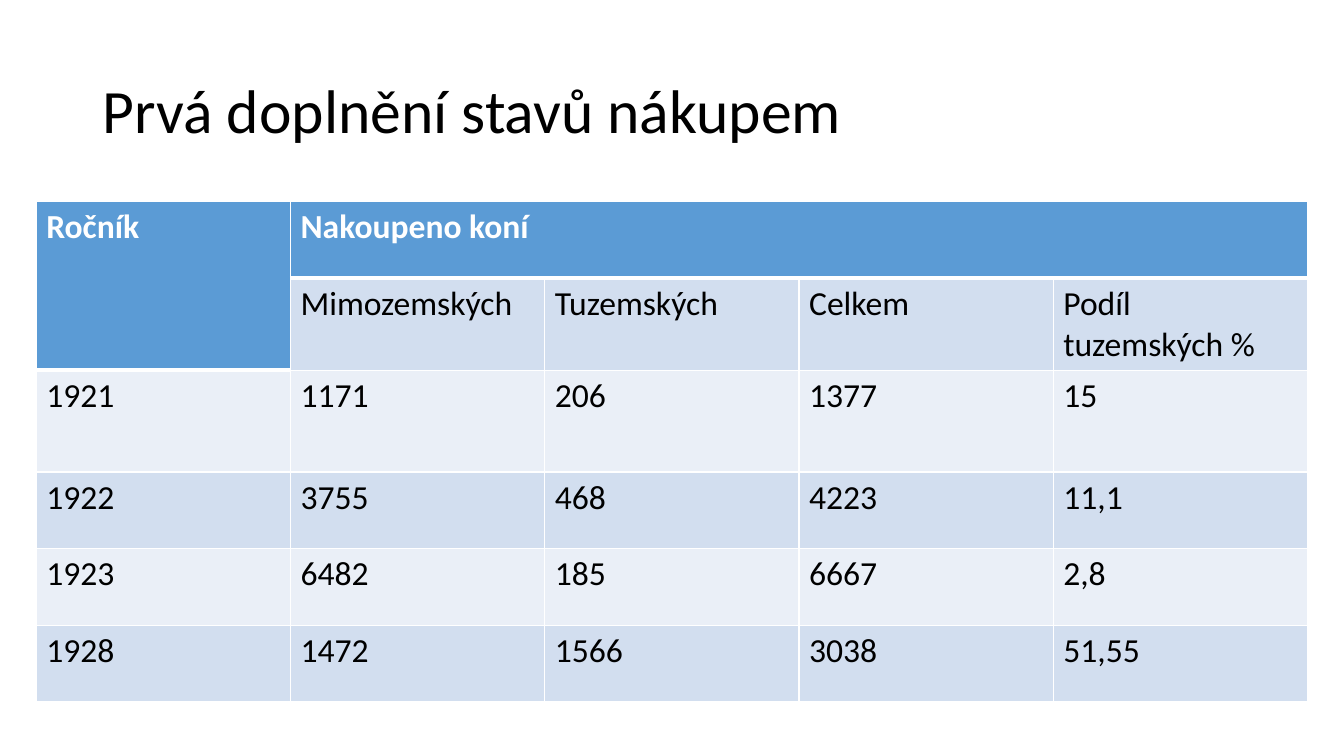
import dataclasses

import pptx
import pptx.dml.color
import pptx.enum.text
import pptx.oxml
import pptx.oxml.ns
import pptx.util


@dataclasses.dataclass(frozen=True)
class Theme:
    """Colours, font and type sizes of the slide."""
    font: str = "Calibri"
    title: int = 44
    body: int = 24
    ink: str = "000000"
    white: str = "FFFFFF"
    head: str = "5B9BD5"
    bands: tuple = ("EAEFF7", "D2DEEF")
    thin: int = 1
    thick: int = 3


THEME = Theme()
WIDE, HIGH = 13.33, 7.5
ROWS = [
    ["Ročník", "Nakoupeno koní", "", "", ""],
    ["", "Mimozemských", "Tuzemských", "Celkem", "Podíl tuzemských %"],
    ["1921", "1171", "206", "1377", "15"],
    ["1922", "3755", "468", "4223", "11,1"],
    ["1923", "6482", "185", "6667", "2,8"],
    ["1928", "1472", "1566", "3038", "51,55"],
]
TALL = {2: 1.01}
ROW = 0.76


def color(code):
    """Turn a hex code into a colour."""
    return pptx.dml.color.RGBColor.from_string(code)


def style(para, size, code, bold=False):
    """Format every run of a paragraph."""
    for run in para.runs:
        font = run.font
        font.name, font.size, font.bold = THEME.font, pptx.util.Pt(size), bold
        font.color.rgb = color(code)


def border(cell, side, width):
    """Add a white rule to one side of a cell."""
    space = pptx.oxml.ns.nsdecls("a")
    line = pptx.oxml.parse_xml(
        f'<a:ln{side} {space} w="{pptx.util.Pt(width)}"><a:solidFill>'
        f'<a:srgbClr val="{THEME.white}"/></a:solidFill></a:ln{side}>')
    cell._tc.get_or_add_tcPr().append(line)


def is_head(row, col):
    """Tell whether a cell belongs to the dark header."""
    return row == 0 or (row, col) == (1, 0)


def add_title(slide, box, text):
    """Place and format the slide title."""
    title = slide.shapes.title
    title.left, title.top, title.width, title.height = map(pptx.util.Inches, box)
    frame = title.text_frame
    frame.text = text
    frame.auto_size = pptx.enum.text.MSO_AUTO_SIZE.NONE
    frame.vertical_anchor = pptx.enum.text.MSO_ANCHOR.MIDDLE
    para = frame.paragraphs[0]
    para.alignment = pptx.enum.text.PP_ALIGN.LEFT
    para.line_spacing = 0.9
    style(para, THEME.title, THEME.ink)


def add_cell(cell, row, col, text):
    """Fill, rule and label one table cell."""
    head = is_head(row, col)
    below = row > 0 and is_head(row - 1, col) and not head
    border(cell, "L", THEME.thin)
    border(cell, "R", THEME.thin)
    border(cell, "T", THEME.thick if below else THEME.thin)
    border(cell, "B", THEME.thick if head else THEME.thin)
    cell.fill.solid()
    cell.fill.fore_color.rgb = color(THEME.head if head else THEME.bands[row % 2])
    cell.text_frame.text = text
    para = cell.text_frame.paragraphs[0]
    para.font.size = pptx.util.Pt(THEME.body)
    style(para, THEME.body, THEME.white if head else THEME.ink, head)


def add_grid(slide, box, rows):
    """Build the purchase table with its merged header."""
    count = len(rows[0])
    table = slide.shapes.add_table(
        len(rows), count, *map(pptx.util.Inches, box)).table
    for col in table.columns:
        col.width = pptx.util.Inches(box[2] / count)
    for row, texts in enumerate(rows):
        table.rows[row].height = pptx.util.Inches(TALL.get(row, ROW))
        for col, text in enumerate(texts):
            add_cell(table.cell(row, col), row, col, text)
    table.cell(0, 0).merge(table.cell(1, 0))
    table.cell(0, 1).merge(table.cell(0, count - 1))


def main():
    """Build and save the slide."""
    deck = pptx.Presentation()
    deck.slide_width = pptx.util.Inches(WIDE)
    deck.slide_height = pptx.util.Inches(HIGH)
    slide = deck.slides.add_slide(deck.slide_layouts[5])
    add_title(slide, (0.92, 0.4, 11.5, 1.45), "Prvá doplnění stavů nákupem")
    high = sum(TALL.get(row, ROW) for row in range(len(ROWS)))
    add_grid(slide, (0.36, 2, 12.61, high), ROWS)
    deck.save("out.pptx")


if __name__ == "__main__":
    main()
